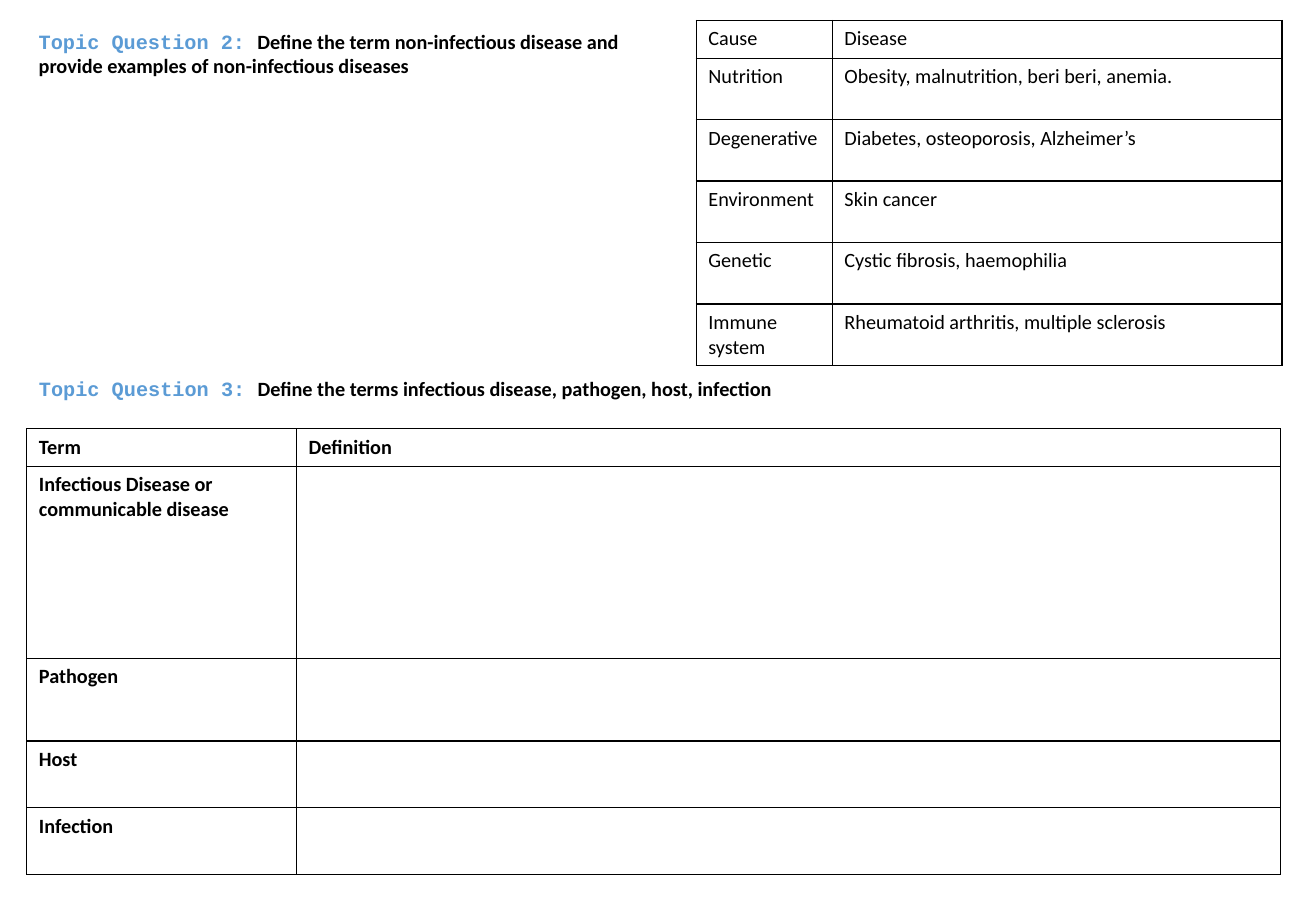
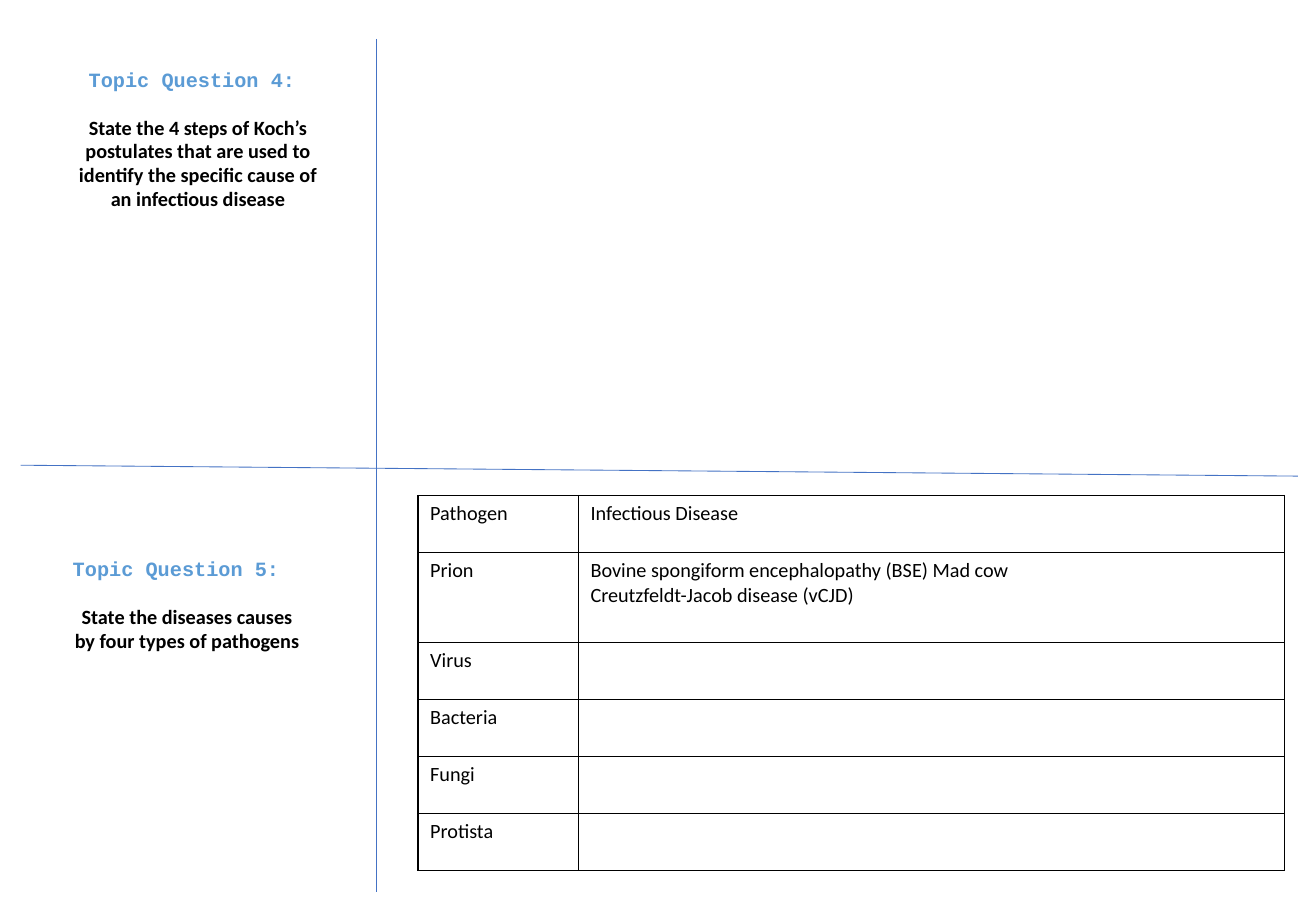
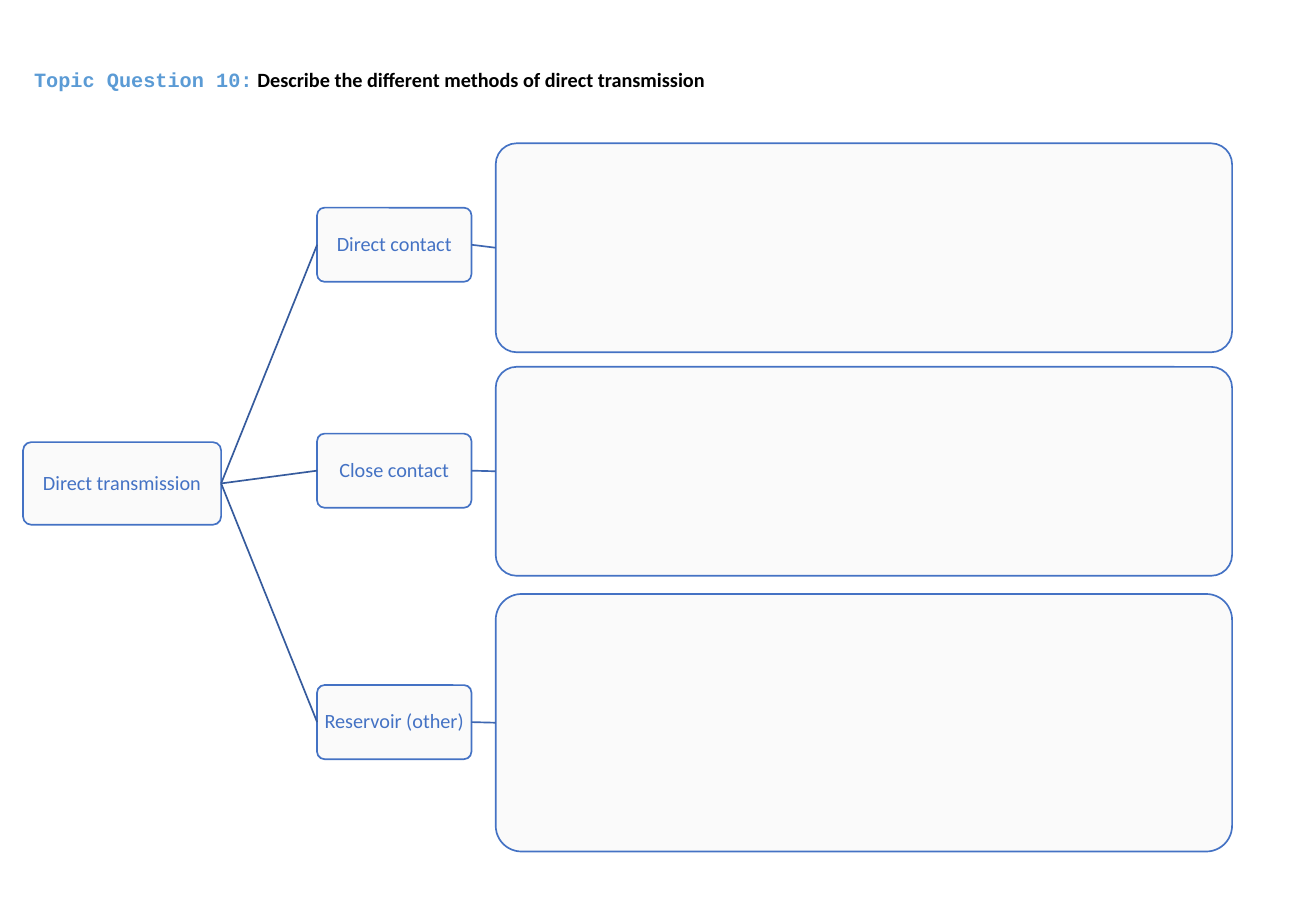
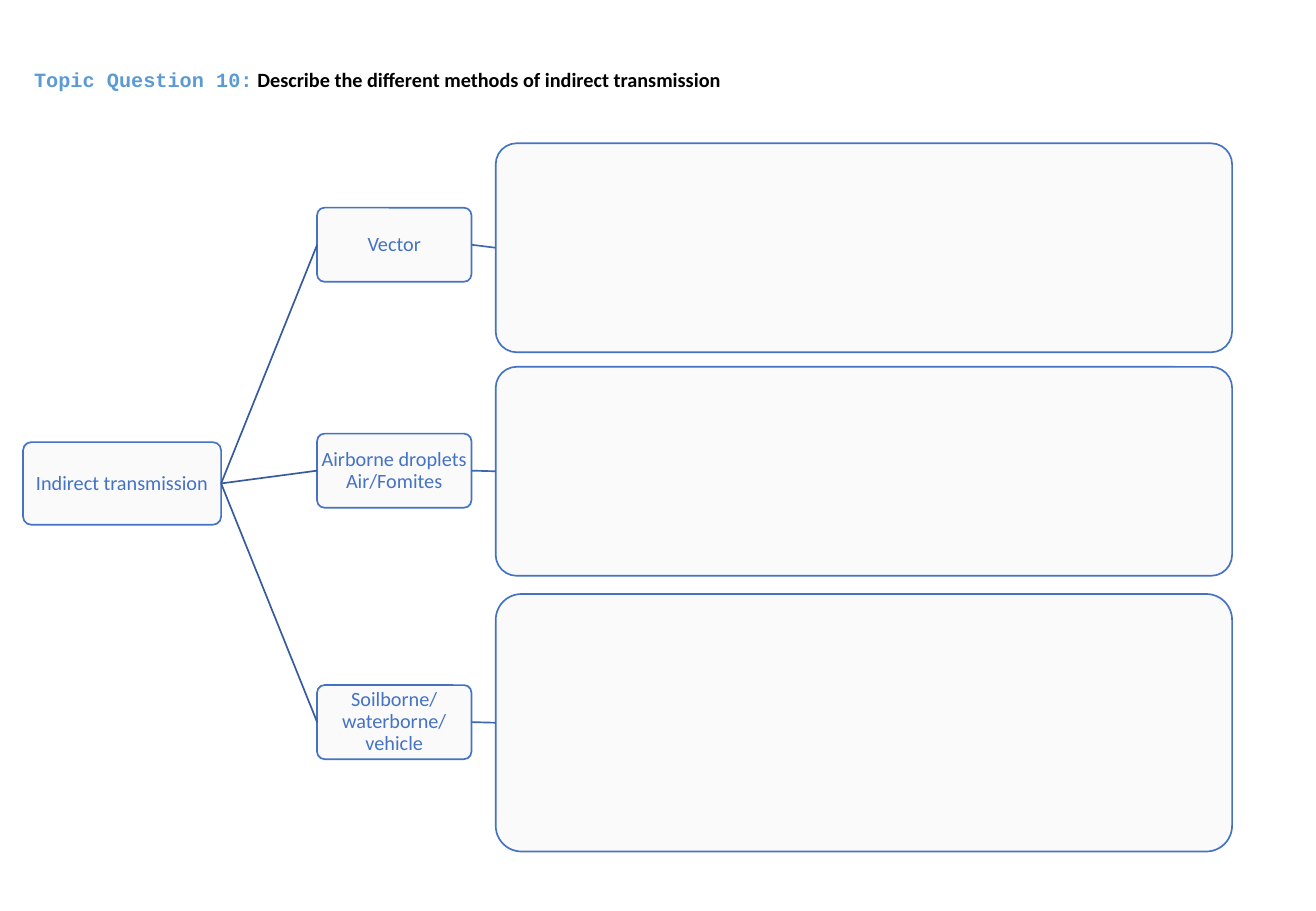
from dataclasses import dataclass
from typing import Optional

import lxml.etree
import pptx
import pptx.dml.color
import pptx.enum.shapes
import pptx.enum.text
import pptx.oxml.ns
import pptx.presentation
import pptx.shapes.autoshape
import pptx.shapes.base
import pptx.shapes.connector
import pptx.slide
import pptx.table
import pptx.text.text
import pptx.util

Inches = pptx.util.Inches
Pt = pptx.util.Pt
qn = pptx.oxml.ns.qn
ALIGN = pptx.enum.text.PP_ALIGN
ANCHOR = pptx.enum.text.MSO_ANCHOR

# Shared style
BODY_FONT, LABEL_FONT = "Calibri", "Courier New"
TEXT_SIZE = 12
BLACK, LABEL_BLUE = "000000", "5B9BD5"
BLUE, BOX_FILL = "4472C4", "FAFAFA"
BRANCH_BLUE, ANSWER_BLUE = "365B9D", "3E67B2"


@dataclass
class Heading:
    """A topic question; label_align puts the label on a line of its own."""
    label: str
    question: str
    left: float
    top: float
    width: float
    height: float = 0.75
    inset_left: float = 0.1
    inset_top: float = 0.0
    label_align: Optional[ALIGN] = None


@dataclass
class Grid:
    left: float
    top: float
    cols: list[float]
    rows: list[float]
    cells: list[list[str]]
    bold: bool = False


@dataclass
class Branch:
    """Heights of one method box and the answer box beside it."""
    node_top: float
    answer_top: float
    answer_height: float


BRANCHES = [
    Branch(1.71, 1.18, 1.72),
    Branch(3.57, 3.02, 1.72),
    Branch(5.64, 4.89, 2.12),
]


def rgb(color: str) -> pptx.dml.color.RGBColor:
    return pptx.dml.color.RGBColor.from_string(color)


def style_run(r: pptx.text.text._Run, color: str, font: str = BODY_FONT,
              bold: bool = False) -> None:
    r.font.name = font
    r.font.size = Pt(TEXT_SIZE)
    r.font.bold = bold
    r.font.color.rgb = rgb(color)


def add_run(p: pptx.text.text._Paragraph, text: str, color: str, font: str) -> None:
    r = p.add_run()
    r.text = text
    style_run(r, color, font, bold=True)


def add_heading(slide: pptx.slide.Slide, h: Heading, is_title: bool = True) -> None:
    box = [Inches(v) for v in (h.left, h.top, h.width, h.height)]
    if is_title:
        sp = slide.shapes.title
        sp.left, sp.top, sp.width, sp.height = box
    else:
        sp = slide.shapes.add_textbox(*box)
    tf = sp.text_frame
    tf.word_wrap = True
    tf.auto_size = pptx.enum.text.MSO_AUTO_SIZE.NONE
    tf.vertical_anchor = ANCHOR.TOP
    tf.margin_left = tf.margin_right = Inches(h.inset_left)
    tf.margin_top, tf.margin_bottom = Inches(h.inset_top), 0
    p = tf.paragraphs[0]
    p.alignment = h.label_align or ALIGN.LEFT
    add_run(p, h.label, LABEL_BLUE, LABEL_FONT)
    if h.label_align is not None:
        p = tf.add_paragraph()
        p.alignment = ALIGN.CENTER
        p.space_before = Pt(14.4)
    add_run(p, h.question, BLACK, BODY_FONT)
    for p in tf.paragraphs:
        p.line_spacing = 0.98


def add_borders(cell: pptx.table._Cell) -> None:
    tc_pr = cell._tc.get_or_add_tcPr()
    for side in ("a:lnL", "a:lnR", "a:lnT", "a:lnB"):
        ln = lxml.etree.SubElement(tc_pr, qn(side), w=str(Pt(1)))
        fill = lxml.etree.SubElement(ln, qn("a:solidFill"))
        lxml.etree.SubElement(fill, qn("a:srgbClr"), val=BLACK)


def add_grid(slide: pptx.slide.Slide, g: Grid) -> None:
    table = slide.shapes.add_table(
        len(g.rows), len(g.cols), Inches(g.left), Inches(g.top),
        Inches(sum(g.cols)), Inches(sum(g.rows))).table
    table.first_row = table.horz_banding = False
    for col, width in zip(table.columns, g.cols):
        col.width = Inches(width)
    for row, height, texts in zip(table.rows, g.rows, g.cells):
        row.height = Inches(height)
        for cell, text in zip(row.cells, texts):
            add_borders(cell)
            cell.fill.background()
            cell.text_frame.text = text
            for p in cell.text_frame.paragraphs:
                for r in p.runs:
                    style_run(r, BLACK, bold=g.bold)


def add_line(slide: pptx.slide.Slide, start: tuple[float, float],
             end: tuple[float, float], color: str,
             weight: float) -> pptx.shapes.connector.Connector:
    line = slide.shapes.add_connector(
        pptx.enum.shapes.MSO_CONNECTOR.STRAIGHT,
        *(Inches(v) for v in (*start, *end)))
    line.line.color.rgb = rgb(color)
    line.line.width = Pt(weight)
    lxml.etree.SubElement(line._element.spPr, qn("a:effectLst"))
    return line


def join(slide: pptx.slide.Slide, a: pptx.shapes.base.BaseShape,
         b: pptx.shapes.base.BaseShape, color: str) -> None:
    """Connect the right side of a to the left side of b."""
    line = add_line(slide, (0, 0), (1, 1), color, 1)
    line.begin_connect(a, 3)
    line.end_connect(b, 1)


def add_box(slide: pptx.slide.Slide, left: float, top: float, width: float,
            height: float, text: str = "") -> pptx.shapes.autoshape.Shape:
    sp = slide.shapes.add_shape(
        pptx.enum.shapes.MSO_SHAPE.ROUNDED_RECTANGLE,
        Inches(left), Inches(top), Inches(width), Inches(height))
    sp.adjustments[0] = 0.1
    sp.shadow.inherit = False
    sp.fill.solid()
    sp.fill.fore_color.rgb = rgb(BOX_FILL)
    sp.line.color.rgb = rgb(BLUE)
    sp.line.width = Pt(1)
    if text:
        tf = sp.text_frame
        tf.word_wrap = True
        tf.vertical_anchor = ANCHOR.MIDDLE
        tf.margin_left = tf.margin_right = Inches(0.01)
        tf.margin_top = tf.margin_bottom = Inches(0.01)
        tf.text = text
        p = tf.paragraphs[0]
        p.alignment = ALIGN.CENTER
        p.line_spacing = 0.9
        style_run(p.runs[0], BLUE)
    return sp


def add_slide(prs: pptx.presentation.Presentation) -> pptx.slide.Slide:
    return prs.slides.add_slide(prs.slide_layouts[5])  # Title Only


def definitions_slide(prs: pptx.presentation.Presentation) -> None:
    slide = add_slide(prs)
    add_heading(slide, Heading(
        "Topic Question 3: ",
        "Define the terms infectious disease, pathogen, host, infection",
        0.22, 3.03, 8.06, inset_top=0.08))
    add_grid(slide, Grid(
        0.22, 3.53, [2.22, 8.1], [0.31, 1.58, 0.68, 0.55, 0.55],
        [["Term", "Definition"],
         ["Infectious Disease or communicable disease", ""],
         ["Pathogen", ""],
         ["Host", ""],
         ["Infection", ""]], bold=True))
    add_heading(slide, Heading(
        "Topic Question 2: ",
        "Define the term non-infectious disease and provide examples of "
        "non-infectious diseases",
        0.22, 0.25, 4.99), is_title=False)
    add_grid(slide, Grid(
        5.73, 0.17, [1.12, 3.7], [0.31] + [2.53 / 5] * 5,
        [["Cause", "Disease"],
         ["Nutrition", "Obesity, malnutrition, beri beri, anemia."],
         ["Degenerative", "Diabetes, osteoporosis, Alzheimer’s"],
         ["Environment", "Skin cancer"],
         ["Genetic", "Cystic fibrosis, haemophilia"],
         ["Immune system", "Rheumatoid arthritis, multiple sclerosis"]]))


def pathogens_slide(prs: pptx.presentation.Presentation) -> None:
    slide = add_slide(prs)
    # Dividers
    add_line(slide, (3.1, 0.32), (3.1, 7.34), BLUE, 0.5)
    add_line(slide, (0.17, 3.83), (10.68, 3.92), BLUE, 0.5)
    # Questions
    add_heading(slide, Heading(
        "Topic Question 4: ",
        "State the 4 steps of Koch’s postulates that are used to identify "
        "the specific cause of an infectious disease",
        0.5, 0.56, 2.26, 1.25, label_align=ALIGN.CENTER))
    add_heading(slide, Heading(
        "Topic Question 5:",
        "State the diseases causes by four types of pathogens",
        0.5, 4.59, 2.08, 0.85, label_align=ALIGN.LEFT), is_title=False)
    # Diseases by pathogen
    add_grid(slide, Grid(
        3.44, 4.08, [1.32, 5.81], [0.47, 0.74] + [0.47] * 4,
        [["Pathogen", "Infectious Disease"],
         ["Prion", "Bovine spongiform encephalopathy (BSE) Mad cow\n"
                   "Creutzfeldt-Jacob disease (vCJD)"],
         ["Virus", ""],
         ["Bacteria", ""],
         ["Fungi", ""],
         ["Protista", ""]]))


def transmission_slide(prs: pptx.presentation.Presentation, kind: str,
                       methods: list[str]) -> None:
    slide = add_slide(prs)
    add_heading(slide, Heading(
        "Topic Question 10:",
        f" Describe the different methods of {kind.lower()} transmission",
        0.28, 0.37, 9.39, inset_left=0, inset_top=0.19))
    # Tree: kind, methods, answers
    root = add_box(slide, 0.19, 3.64, 1.63, 0.68, f"{kind} transmission")
    for branch, method in zip(BRANCHES, methods):
        node = add_box(slide, 2.61, branch.node_top, 1.27, 0.61, method)
        answer = add_box(slide, 4.08, branch.answer_top, 6.06, branch.answer_height)
        join(slide, root, node, BRANCH_BLUE)
        join(slide, node, answer, ANSWER_BLUE)


def main() -> None:
    prs = pptx.Presentation()
    prs.slide_width, prs.slide_height = Inches(10.83), Inches(7.5)
    definitions_slide(prs)
    pathogens_slide(prs)
    transmission_slide(prs, "Direct", [
        "Direct contact", "Close contact", "Reservoir (other)"])
    transmission_slide(prs, "Indirect", [
        "Vector", "Airborne droplets Air/Fomites", "Soilborne/waterborne/vehicle"])
    prs.save("out.pptx")


if __name__ == "__main__":
    main()
